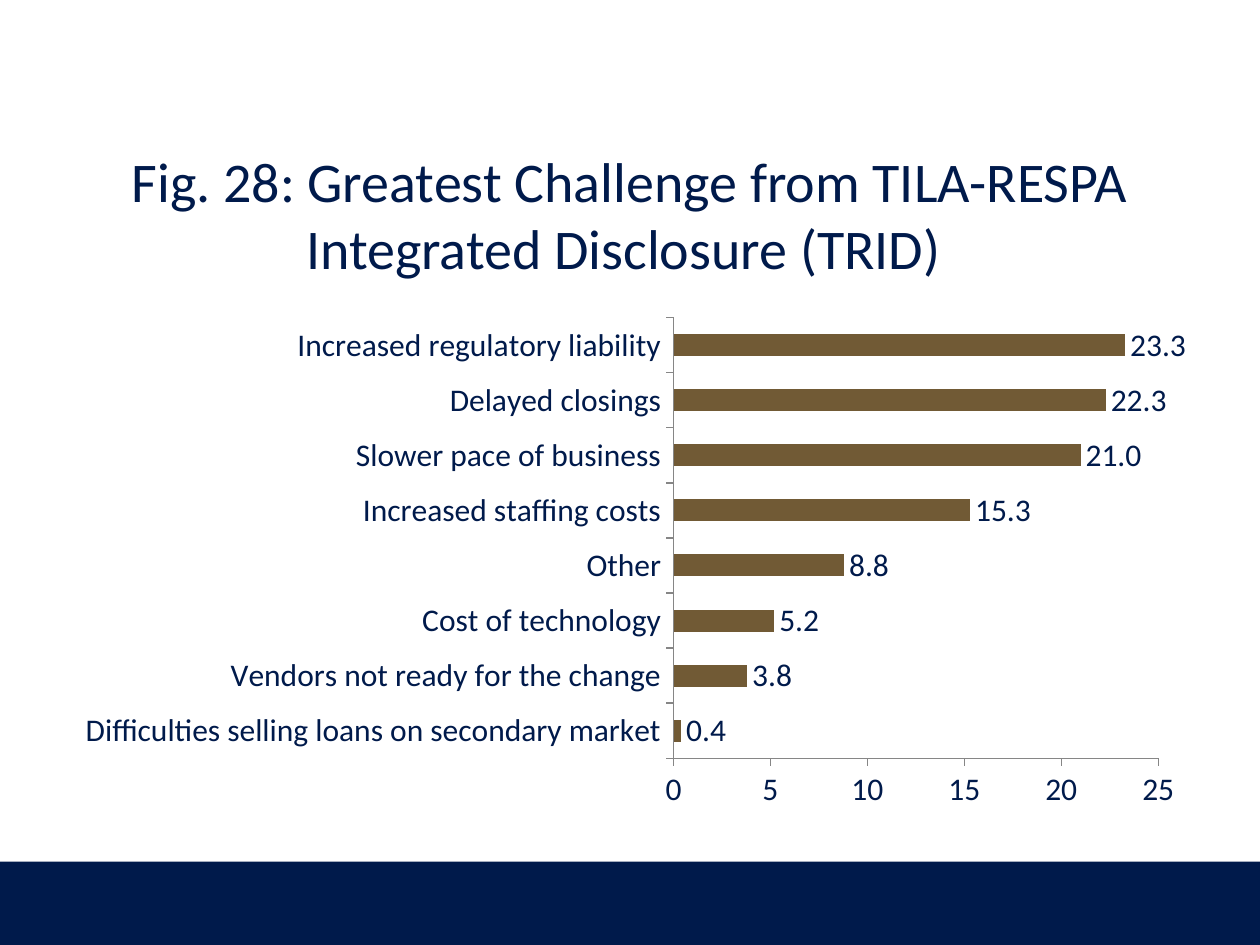
from dataclasses import dataclass

import pptx
import pptx.chart.data
import pptx.dml.color
import pptx.enum.chart
import pptx.enum.shapes
import pptx.enum.text
import pptx.util
from pptx.util import Cm


@dataclass(frozen=True)
class Theme:
    navy: str = "001A4B"
    brown: str = "715A35"
    grey: str = "868686"
    font: str = "Calibri"
    title_size: int = 32
    chart_size: int = 18


THEME = Theme()

CHALLENGES = {
    "Difficulties selling loans on secondary market": 0.4,
    "Vendors not ready for the change": 3.8,
    "Cost of technology": 5.2,
    "Other": 8.8,
    "Increased staffing costs": 15.3,
    "Slower pace of business": 21.0,
    "Delayed closings": 22.3,
    "Increased regulatory liability": 23.3,
}


def color(value):
    return pptx.dml.color.RGBColor.from_string(value)


def format_font(font, size):
    font.name = THEME.font
    font.size = pptx.util.Pt(size)
    font.color.rgb = color(THEME.navy)


def write_text(shape, text, *, size, align, anchor):
    frame = shape.text_frame
    frame.word_wrap = True
    frame.vertical_anchor = anchor
    paragraph = frame.paragraphs[0]
    paragraph.alignment = align
    run = paragraph.add_run()
    run.text = text
    format_font(run.font, size)


def add_title(slide, text):
    title = slide.shapes.title
    title.left, title.top = Cm(1.27), Cm(2.72)
    title.width, title.height = Cm(22.86), Cm(3.18)
    write_text(title, text, size=THEME.title_size,
               align=pptx.enum.text.PP_ALIGN.CENTER,
               anchor=pptx.enum.text.MSO_ANCHOR.MIDDLE)


def add_footer_band(slide):
    band = slide.shapes.add_shape(pptx.enum.shapes.MSO_SHAPE.RECTANGLE,
                                  0, Cm(17.37), Cm(25.4), Cm(1.68))
    band.shadow.inherit = False
    band.fill.solid()
    band.fill.fore_color.rgb = color(THEME.navy)
    band.line.fill.background()


def format_axis(axis):
    axis.has_major_gridlines = False
    axis.major_tick_mark = pptx.enum.chart.XL_TICK_MARK.OUTSIDE
    axis.minor_tick_mark = pptx.enum.chart.XL_TICK_MARK.NONE
    axis.format.line.color.rgb = color(THEME.grey)
    axis.format.line.width = pptx.util.Pt(0.75)


def add_bar_chart(slide, values):
    data = pptx.chart.data.CategoryChartData()
    data.categories = list(values)
    data.add_series("Series 1", list(values.values()))
    chart = slide.shapes.add_chart(
        pptx.enum.chart.XL_CHART_TYPE.BAR_CLUSTERED,
        Cm(1.27), Cm(6.2), Cm(22.86), Cm(10.31), data).chart
    chart.has_title = False
    chart.has_legend = False
    format_font(chart.font, THEME.chart_size)

    # Axes
    for axis in (chart.category_axis, chart.value_axis):
        format_axis(axis)
    chart.value_axis.minimum_scale = 0
    chart.value_axis.maximum_scale = 25
    chart.value_axis.major_unit = 5

    # Bars and their values
    plot = chart.plots[0]
    plot.gap_width = 150
    plot.vary_by_categories = False
    fill = plot.series[0].format.fill
    fill.solid()
    fill.fore_color.rgb = color(THEME.brown)
    plot.has_data_labels = True
    labels = plot.data_labels
    labels.show_value = True
    labels.number_format = "#,##0.0"
    labels.number_format_is_linked = False
    labels.position = pptx.enum.chart.XL_LABEL_POSITION.OUTSIDE_END
    format_font(labels.font, THEME.chart_size)


def main():
    presentation = pptx.Presentation()
    presentation.slide_width, presentation.slide_height = Cm(25.4), Cm(19.05)
    title_only = presentation.slide_layouts[5]
    slide = presentation.slides.add_slide(title_only)

    add_footer_band(slide)
    add_title(slide, "Fig. 28: Greatest Challenge from TILA-RESPA "
                     "Integrated Disclosure (TRID) ")
    add_bar_chart(slide, CHALLENGES)

    presentation.save("out.pptx")


if __name__ == "__main__":
    main()
